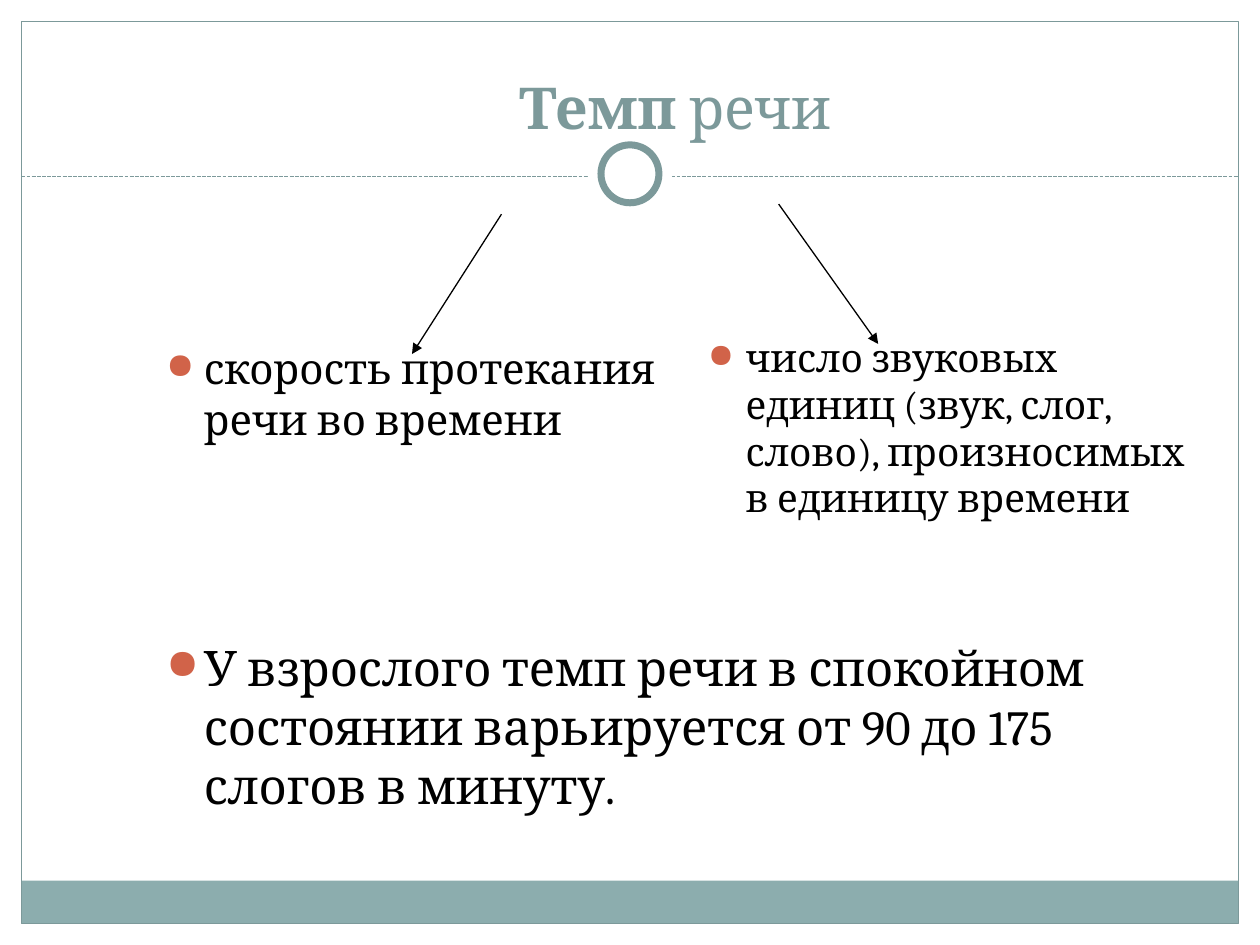
from lxml import etree
from pptx import Presentation
from pptx.dml.color import RGBColor
from pptx.enum.dml import MSO_LINE
from pptx.enum.shapes import MSO_CONNECTOR, MSO_SHAPE
from pptx.enum.text import MSO_ANCHOR, PP_ALIGN
from pptx.oxml.ns import qn
from pptx.util import Inches, Pt

RECT, OVAL = MSO_SHAPE.RECTANGLE, MSO_SHAPE.OVAL
STRAIGHT = MSO_CONNECTOR.STRAIGHT
DASH = MSO_LINE.SQUARE_DOT
CENTER = PP_ALIGN.CENTER
TOP, BOTTOM = MSO_ANCHOR.TOP, MSO_ANCHOR.BOTTOM
FONT = "Cambria"
TEAL, BAND, RED, WHITE, BLACK = "7C999A", "8CADAE", "D16349", "FFFFFF", "000000"


def color(hex_code):
    """Return a colour from its hex string."""
    return RGBColor.from_string(hex_code)


def style_font(r, size, hex_code, bold=False):
    """Format a run."""
    r.font.name, r.font.size, r.font.bold = FONT, Pt(size), bold
    r.font.color.rgb = color(hex_code)


def add_figure(s, kind, box, fill=None, line=None, width=0.75):
    """Draw a preset shape in the box."""
    sp = s.shapes.add_shape(kind, *map(Inches, box))
    sp.shadow.inherit = False
    if fill:
        sp.fill.solid()
        sp.fill.fore_color.rgb = color(fill)
    else:
        sp.fill.background()
    if line:
        sp.line.color.rgb = color(line)
        sp.line.width = Pt(width)
    else:
        sp.line.fill.background()


def add_line(s, start, end, hex_code):
    """Draw a thin straight line and return it."""
    line = s.shapes.add_connector(STRAIGHT, *map(Inches, start + end))
    line.line.color.rgb = color(hex_code)
    line.line.width = Pt(0.75)
    etree.SubElement(line._element.spPr, qn("a:effectLst"))
    return line


def add_arrow(s, start, end):
    """Draw a black arrow pointing at its end."""
    ln = add_line(s, start, end, BLACK).line._get_or_add_ln()
    etree.SubElement(ln, qn("a:tailEnd"), type="triangle")


def add_frame(s, box):
    """Draw the border, bottom band, dashed rule and ring."""
    left, top, width, height = box
    right, mid, rule = left + width, left + width / 2, top + 1.23
    band = 0.34
    add_figure(s, RECT, (left, top + height - band, width, band), BAND)
    add_figure(s, RECT, box, line=TEAL)
    add_line(s, (left, rule), (right, rule), TEAL).line.dash_style = DASH
    for size, line in ((0.67, None), (0.46, TEAL)):
        ring = (mid - size / 2, rule - 0.02 - size / 2, size, size)
        add_figure(s, OVAL, ring, WHITE, line, 4)


def add_title(s, box):
    """Place the title with its first word in bold."""
    title = s.shapes.title
    title.left, title.top, title.width, title.height = map(Inches, box)
    tf = title.text_frame
    tf.vertical_anchor = BOTTOM
    p = tf.paragraphs[0]
    p.alignment = CENTER
    for text, bold in (("Темп", True), (" речи", False)):
        r = p.add_run()
        r.text = text
        style_font(r, 33, TEAL, bold)


def add_bullet(s, box, text, size, inset=0.05):
    """Place a bulleted paragraph below the given top inset."""
    tf = s.shapes.add_textbox(*map(Inches, box)).text_frame
    tf.word_wrap = True
    tf.vertical_anchor = TOP
    tf.margin_top = Inches(inset)
    p = tf.paragraphs[0]
    p.text = text
    style_font(p.runs[0], size, BLACK)
    pPr = p._p.get_or_add_pPr()
    pPr.set("marL", str(Inches(0.3)))
    pPr.set("indent", str(-Inches(0.3)))
    bullet_color = etree.SubElement(pPr, qn("a:buClr"))
    etree.SubElement(bullet_color, qn("a:srgbClr"), val=RED)
    etree.SubElement(pPr, qn("a:buSzPct"), val="85000")
    etree.SubElement(pPr, qn("a:buChar"), char="●")


def add_body(s, box):
    """Place two definitions side by side and the norm below them."""
    left, top, width, height = box
    column, row = 4.13, 2.39
    norm = 1.69
    add_bullet(s, (left, top, column, row),
               "скорость протекания речи во времени", 24, 0.97)
    add_bullet(s, (left + width - column, top, column, row),
               "число звуковых единиц (звук, слог, слово), "
               "произносимых в единицу времени", 22.2, 0.9)
    add_bullet(s, (left, top + height - norm, width, norm),
               "У взрослого темп речи в спокойном состоянии "
               "варьируется от 90 до 175 слогов в минуту.", 28)
    add_arrow(s, (3.98, 1.7), (3.27, 2.81))
    add_arrow(s, (6.18, 1.62), (6.97, 2.73))


def main():
    """Build and save the slide."""
    prs = Presentation()
    prs.slide_width, prs.slide_height = Inches(10), Inches(7.5)
    s = prs.slides.add_slide(prs.slide_layouts[5])
    add_frame(s, (0.17, 0.17, 9.66, 7.16))
    add_title(s, (1.22, 0.3, 8.28, 0.87))
    add_body(s, (1.22, 1.75, 8.43, 4.95))
    prs.save("out.pptx")


if __name__ == "__main__":
    main()
